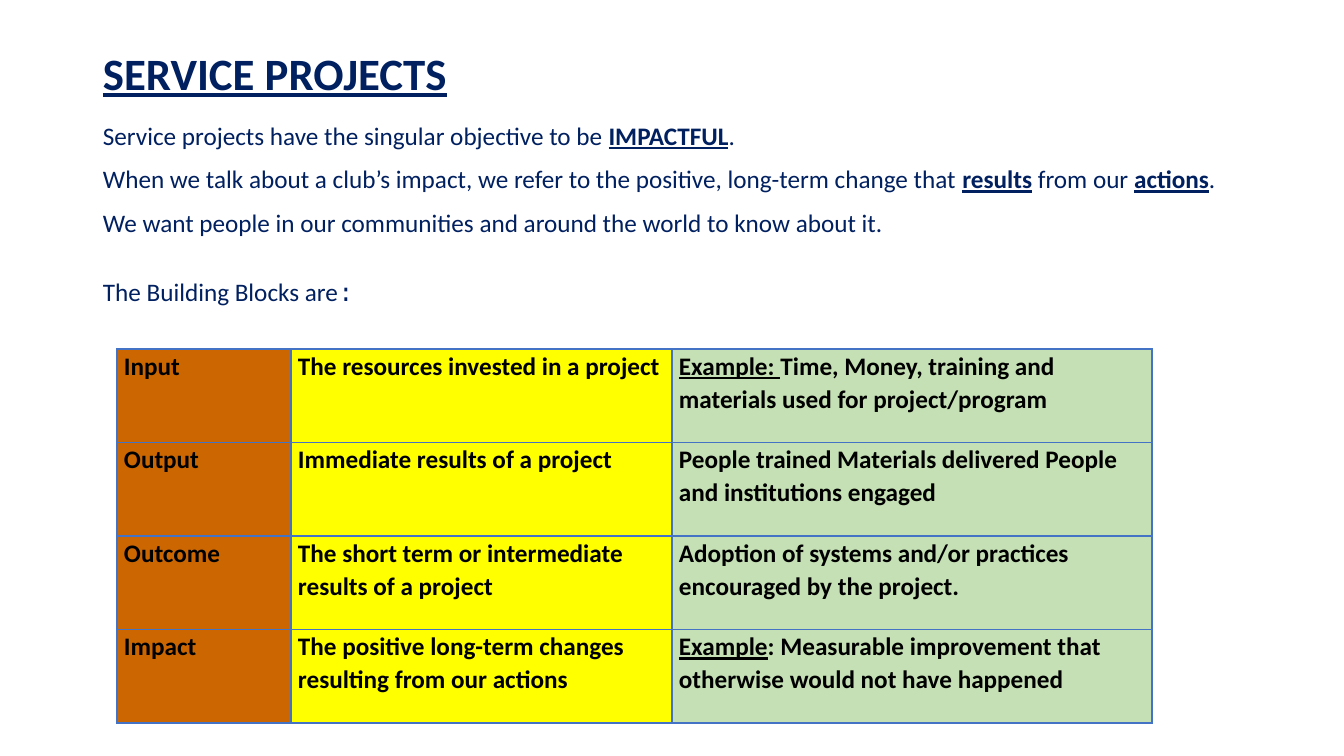
"""Build the Service Projects slide with its table of building blocks."""
from lxml import etree
from pptx import Presentation
from pptx import util as u
from pptx.dml.color import RGBColor
from pptx.enum import text
from pptx.oxml.ns import qn

PX = 914400 / 100.8

THEME = {
    "font": "Calibri",
    "mono": "Courier New",
    "navy": "002060",
    "ink": "000000",
    "border": "4472C4",
    "columns": ("CC6600", "FFFF00", "C5E0B4"),
    "title_size": 32,
    "text_size": 18,
}

SLIDE = (1344, 756)
TITLE_BOX = (93, 24, 1109, 177)
TITLE_INSET = 28
INTRO_BOX = (93, 113, 1172, 232)
TABLE_AT = (117, 349)
TABLE_HEIGHT = 374
COLUMN_WIDTHS = (174, 381, 480)

TITLE = [("SERVICE PROJECTS", "bu")]
INTRO = [
    [("Service projects have the singular objective to be ", ""), ("IMPACTFUL", "bu"), (".", "")],
    [
        ("When we talk about a club’s impact, we refer to the positive, long-term change that ", ""),
        ("results", "bu"),
        (" from our ", ""),
        ("actions", "bu"),
        (".", ""),
    ],
    [("We want people in our communities and around the world to know about it.", "")],
    [("The Building Blocks are", ""), (":", "m")],
]
BLOCKS = [
    (
        [("Input", "b")],
        [("The resources invested in a project", "b")],
        [("Example: ", "bu"), ("Time, Money, training and materials used for project/program", "b")],
    ),
    (
        [("Output", "b")],
        [("Immediate results of a project", "b")],
        [("People trained Materials delivered People and institutions engaged", "b")],
    ),
    (
        [("Outcome", "b")],
        [("The short term or intermediate results of a project", "b")],
        [("Adoption of systems and/or practices encouraged by the project.", "b")],
    ),
    (
        [("Impact", "b")],
        [("The positive long-term changes resulting from our actions", "b")],
        [("Example", "bu"), (": Measurable improvement that otherwise would not have happened", "b")],
    ),
]


def px(length):
    return u.Emu(round(length * PX))


def write(para, spans, size, color, spacing):
    para.line_spacing = spacing
    for words, marks in spans:
        span = para.add_run()
        span.text = words
        font = span.font
        font.name = THEME["mono" if "m" in marks else "font"]
        font.size = u.Pt(size)
        font.color.rgb = RGBColor.from_string(color)
        font.bold = "b" in marks
        font.underline = "u" in marks


def add_text_box(page, place):
    frame = page.shapes.add_textbox(*map(px, place)).text_frame
    frame.word_wrap = True
    return frame


def add_title(page):
    frame = add_text_box(page, TITLE_BOX)
    frame.margin_top = px(TITLE_INSET)
    write(frame.paragraphs[0], TITLE, THEME["title_size"], THEME["navy"], 0.9)


def add_intro(page):
    frame = add_text_box(page, INTRO_BOX)
    for index, spans in enumerate(INTRO):
        para = frame.add_paragraph() if index else frame.paragraphs[0]
        write(para, spans, THEME["text_size"], THEME["navy"], 1.07)
        para.space_after = u.Pt(8)
    para.space_before = u.Pt(18)


def set_borders(cell, widths):
    properties = cell.fill._xPr
    for index, (side, width) in enumerate(widths.items()):
        line = etree.Element(qn(f"a:ln{side}"), w=str(u.Pt(width)))
        fill = etree.SubElement(line, qn("a:solidFill"))
        etree.SubElement(fill, qn("a:srgbClr"), val=THEME["border"])
        properties.insert(index, line)


def add_blocks(page):
    size = (sum(COLUMN_WIDTHS), TABLE_HEIGHT)
    table = page.shapes.add_table(len(BLOCKS), len(COLUMN_WIDTHS), *map(px, TABLE_AT + size)).table
    table.first_row = table.horz_banding = False
    for column, width in zip(table.columns, COLUMN_WIDTHS):
        column.width = px(width)
    for r, block in enumerate(BLOCKS):
        table.rows[r].height = px(TABLE_HEIGHT / len(BLOCKS))
        for c, spans in enumerate(block):
            cell = table.cell(r, c)
            cell.margin_left = cell.margin_right = px(7)
            cell.margin_top = cell.margin_bottom = 0
            cell.vertical_anchor = text.MSO_ANCHOR.TOP
            cell.fill.solid()
            cell.fill.fore_color.rgb = RGBColor.from_string(THEME["columns"][c])
            write(cell.text_frame.paragraphs[0], spans, THEME["text_size"], THEME["ink"], 1.07)
            set_borders(cell, {"L": 1, "R": 1, "T": 1.5 if r == 1 else 1, "B": 1.5 if r == 0 else 1})


def main():
    deck = Presentation()
    deck.slide_width, deck.slide_height = map(px, SLIDE)
    page = deck.slides.add_slide(deck.slide_layouts[6])
    add_title(page)
    add_intro(page)
    add_blocks(page)
    deck.save("out.pptx")


if __name__ == "__main__":
    main()
